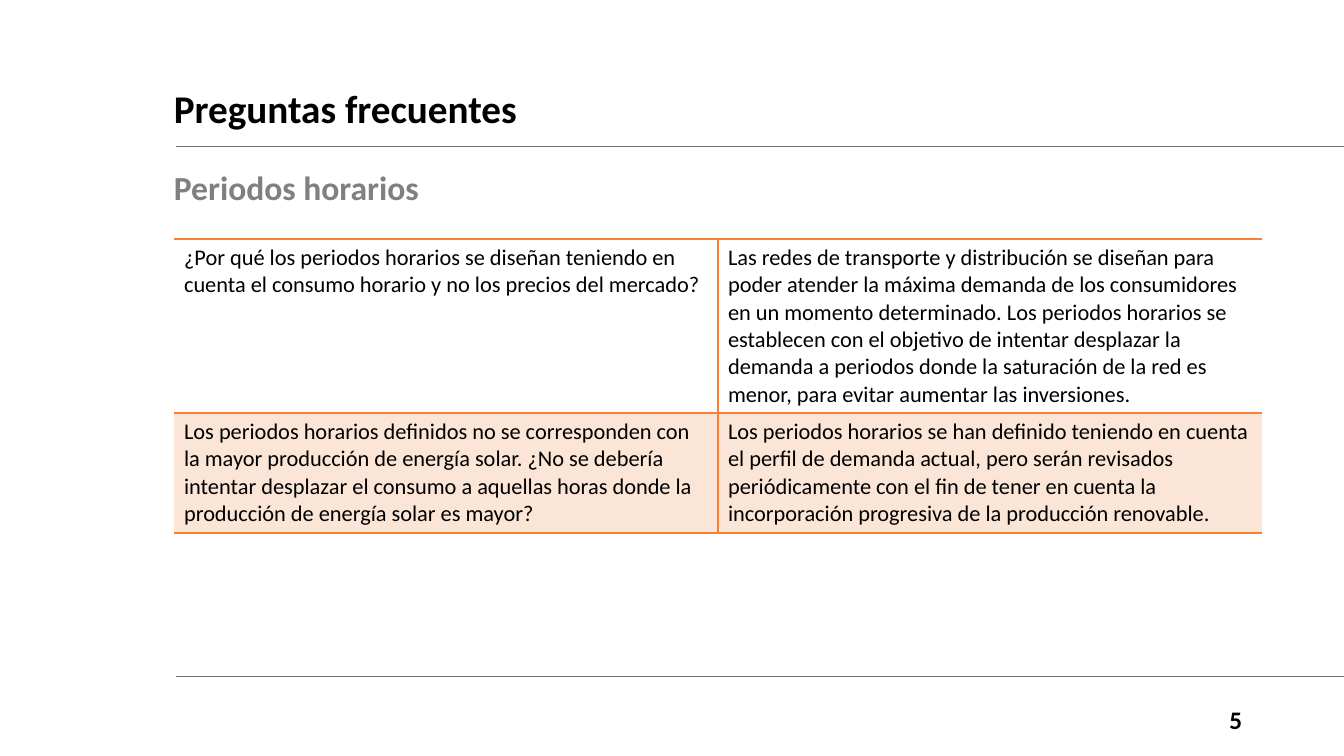
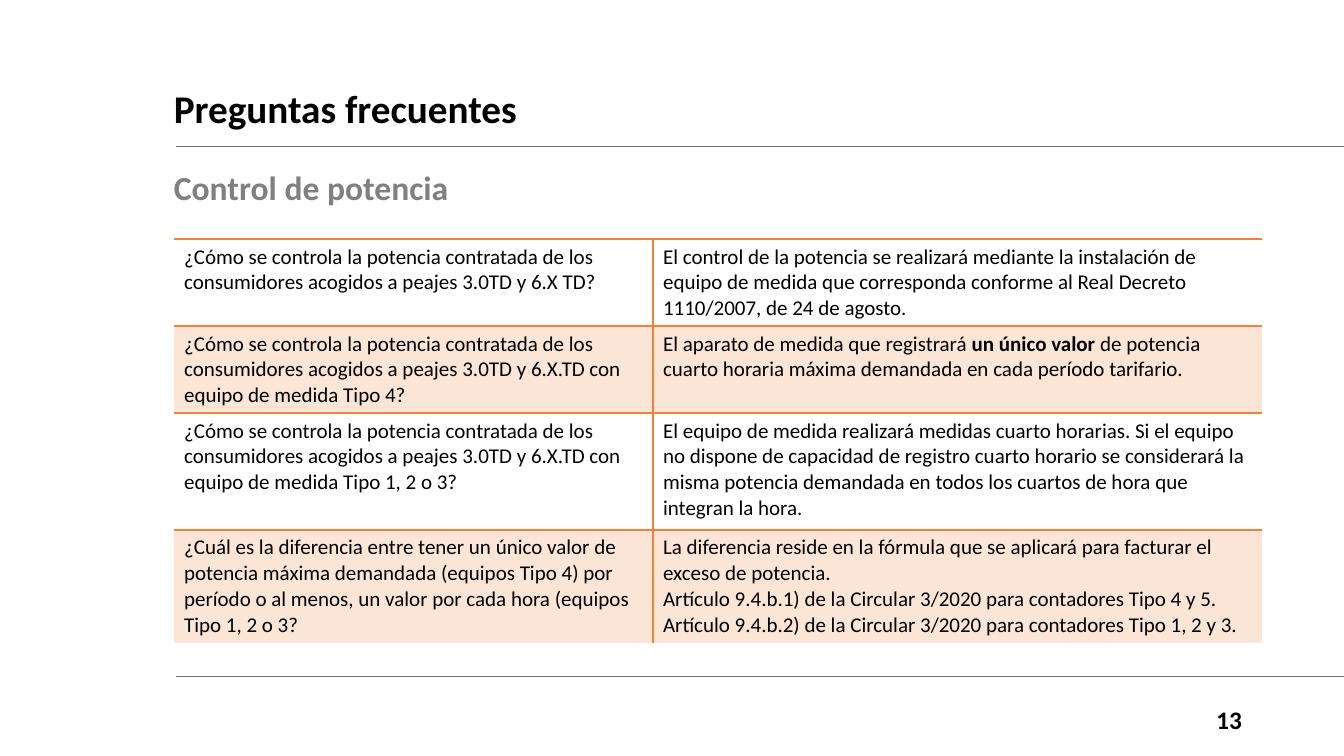
import pptx
import pptx.dml.color
import pptx.enum.shapes
import pptx.enum.text
import pptx.oxml
import pptx.oxml.ns
import pptx.util

SLIDE_WIDTH, SLIDE_HEIGHT = 1344, 756
EMU_PER_PX = 12192000 / SLIDE_WIDTH
FONT = "Calibri"
COLORS = {
    "text": "000000",
    "subtitle": "808080",
    "rule": "767171",
    "border": "F58139",
    "band": "FBE5D6",
}
RULE_LEFT = 176
RULE_TOPS = (146, 676)
TEXT_LEFT, CONTENT_WIDTH = 164, 1088
TABLE_LEFT, TABLE_TOP = 174, 239
ANCHOR = pptx.enum.text.MSO_ANCHOR
ALIGN = pptx.enum.text.PP_ALIGN

FAQ_SLIDES = [
    {
        "number": 5,
        "subtitle": "Periodos horarios",
        "size": 16,
        "columns": (544, 544),
        "row_heights": (174, 120),
        "closed": True,
        "questions": [
            ("¿Por qué los periodos horarios se diseñan teniendo en cuenta el consumo "
             "horario y no los precios del mercado?",
             "Las redes de transporte y distribución se diseñan para poder atender la "
             "máxima demanda de los consumidores en un momento determinado. Los periodos "
             "horarios se establecen con el objetivo de intentar desplazar la demanda a "
             "periodos donde la saturación de la red es menor, para evitar aumentar las "
             "inversiones."),
            ("Los periodos horarios definidos no se corresponden con la mayor producción "
             "de energía solar. ¿No se debería intentar desplazar el consumo a aquellas "
             "horas donde la producción de energía solar es mayor?",
             "Los periodos horarios se han definido teniendo en cuenta el perfil de "
             "demanda actual, pero serán revisados periódicamente con el fin de tener en "
             "cuenta la incorporación progresiva de la producción renovable."),
        ],
    },
    {
        "number": 13,
        "subtitle": "Control de potencia",
        "size": 15,
        "columns": (479, 609),
        "row_heights": (87, 87, 117, 113),
        "closed": False,
        "questions": [
            ("¿Cómo se controla la potencia contratada de los consumidores acogidos a "
             "peajes 3.0TD y 6.X TD?",
             "El control de la potencia se realizará mediante la instalación de equipo de "
             "medida que corresponda conforme al Real Decreto 1110/2007, de 24 de agosto."),
            ("¿Cómo se controla la potencia contratada de los consumidores acogidos a "
             "peajes 3.0TD y 6.X.TD con equipo de medida Tipo 4?",
             "El aparato de medida que registrará **un único valor** de potencia cuarto "
             "horaria máxima demandada en cada período tarifario."),
            ("¿Cómo se controla la potencia contratada de los consumidores acogidos a "
             "peajes 3.0TD y 6.X.TD con equipo de medida Tipo 1, 2 o 3?",
             "El equipo de medida realizará medidas cuarto horarias. Si el equipo no "
             "dispone de capacidad de registro cuarto horario se considerará la misma "
             "potencia demandada en todos los cuartos de hora que integran la hora."),
            ("¿Cuál es la diferencia entre tener un único valor de potencia máxima "
             "demandada (equipos Tipo 4) por período o al menos, un valor por cada hora "
             "(equipos Tipo 1, 2 o 3?",
             "La diferencia reside en la fórmula que se aplicará para facturar el exceso "
             "de potencia.\n"
             "Artículo 9.4.b.1) de la Circular 3/2020 para contadores Tipo 4 y 5.\n"
             "Artículo 9.4.b.2) de la Circular 3/2020 para contadores Tipo 1, 2 y 3."),
        ],
    },
]


def px(length):
    return pptx.util.Emu(round(length * EMU_PER_PX))


def rgb(name):
    return pptx.dml.color.RGBColor.from_string(COLORS[name])


def style_font(font, size, color="text", bold=False):
    font.name = FONT
    font.size = pptx.util.Pt(size)
    font.bold = bold
    font.color.rgb = rgb(color)


def add_rule(slide, top):
    rule = slide.shapes.add_connector(
        pptx.enum.shapes.MSO_CONNECTOR.STRAIGHT,
        px(RULE_LEFT), px(top), px(SLIDE_WIDTH), px(top))
    rule.line.color.rgb = rgb("rule")
    rule.line.width = pptx.util.Pt(0.5)
    pptx.oxml.ns.qn("a:effectLst")
    rule._element.spPr.append(
        pptx.oxml.parse_xml(f'<a:effectLst {pptx.oxml.ns.nsdecls("a")}/>'))


def add_label(slide, text, box, size, color="text", anchor=ANCHOR.MIDDLE,
              align=ALIGN.LEFT, line_spacing=0.9):
    """Add one bold line of text in box (left, top, width, height)."""
    frame = slide.shapes.add_textbox(*map(px, box)).text_frame
    frame.word_wrap = True
    frame.vertical_anchor = anchor
    frame.text = text
    label = frame.paragraphs[0]
    label.alignment = align
    label.line_spacing = line_spacing
    style_font(label.runs[0].font, size, color, bold=True)


def set_borders(cell, visible):
    """Draw the sides in visible (letters of LRTB) and hide the others."""
    properties = cell._tc.get_or_add_tcPr()
    for side in "LRTB":
        if side in visible:
            paint = f'<a:solidFill><a:srgbClr val="{COLORS["border"]}"/></a:solidFill>'
        else:
            paint = "<a:noFill/>"
        properties.append(pptx.oxml.parse_xml(
            f'<a:ln{side} {pptx.oxml.ns.nsdecls("a")} w="12700">{paint}</a:ln{side}>'))


def fill_cell_text(cell, text, size):
    """Write text, with one paragraph a line and bold between double asterisks."""
    cell.text = text.replace("**", "")
    for paragraph, line in zip(cell.text_frame.paragraphs, text.split("\n")):
        pieces = line.split("**")
        paragraph.text = pieces[0]
        for piece in pieces[1:]:
            paragraph.add_run().text = piece
        for index, run in enumerate(paragraph.runs):
            style_font(run.font, size, bold=index % 2 == 1)


def add_question_table(slide, faq):
    questions, columns, heights = faq["questions"], faq["columns"], faq["row_heights"]
    table = slide.shapes.add_table(
        len(questions), len(columns), px(TABLE_LEFT), px(TABLE_TOP),
        px(sum(columns)), px(sum(heights))).table
    table.first_row = False
    table.horz_banding = False
    for column, width in zip(table.columns, columns):
        column.width = px(width)
    for row_index, (row, height, texts) in enumerate(zip(table.rows, heights, questions)):
        row.height = px(height)
        is_last = row_index == len(questions) - 1
        horizontal = "T" if is_last and not faq["closed"] else "TB"
        for cell, text, divider in zip(row.cells, texts, "RL"):
            set_borders(cell, horizontal + divider)
            if row_index % 2:
                cell.fill.solid()
                cell.fill.fore_color.rgb = rgb("band")
            else:
                cell.fill.background()
            fill_cell_text(cell, text, faq["size"])


def add_faq_slide(deck, faq):
    slide = deck.slides.add_slide(deck.slide_layouts[6])
    for top in RULE_TOPS:
        add_rule(slide, top)
    add_label(slide, str(faq["number"]), (1180, 699, 72, 40), 18,
              align=ALIGN.RIGHT, line_spacing=1.0)
    add_label(slide, "Preguntas frecuentes", (TEXT_LEFT, 69, CONTENT_WIDTH, 84), 28)
    add_label(slide, faq["subtitle"], (TEXT_LEFT, 167, CONTENT_WIDTH, 55), 24,
              color="subtitle", anchor=ANCHOR.TOP)
    add_question_table(slide, faq)


def main():
    deck = pptx.Presentation()
    deck.slide_width, deck.slide_height = px(SLIDE_WIDTH), px(SLIDE_HEIGHT)
    for faq in FAQ_SLIDES:
        add_faq_slide(deck, faq)
    deck.save("out.pptx")


if __name__ == "__main__":
    main()
